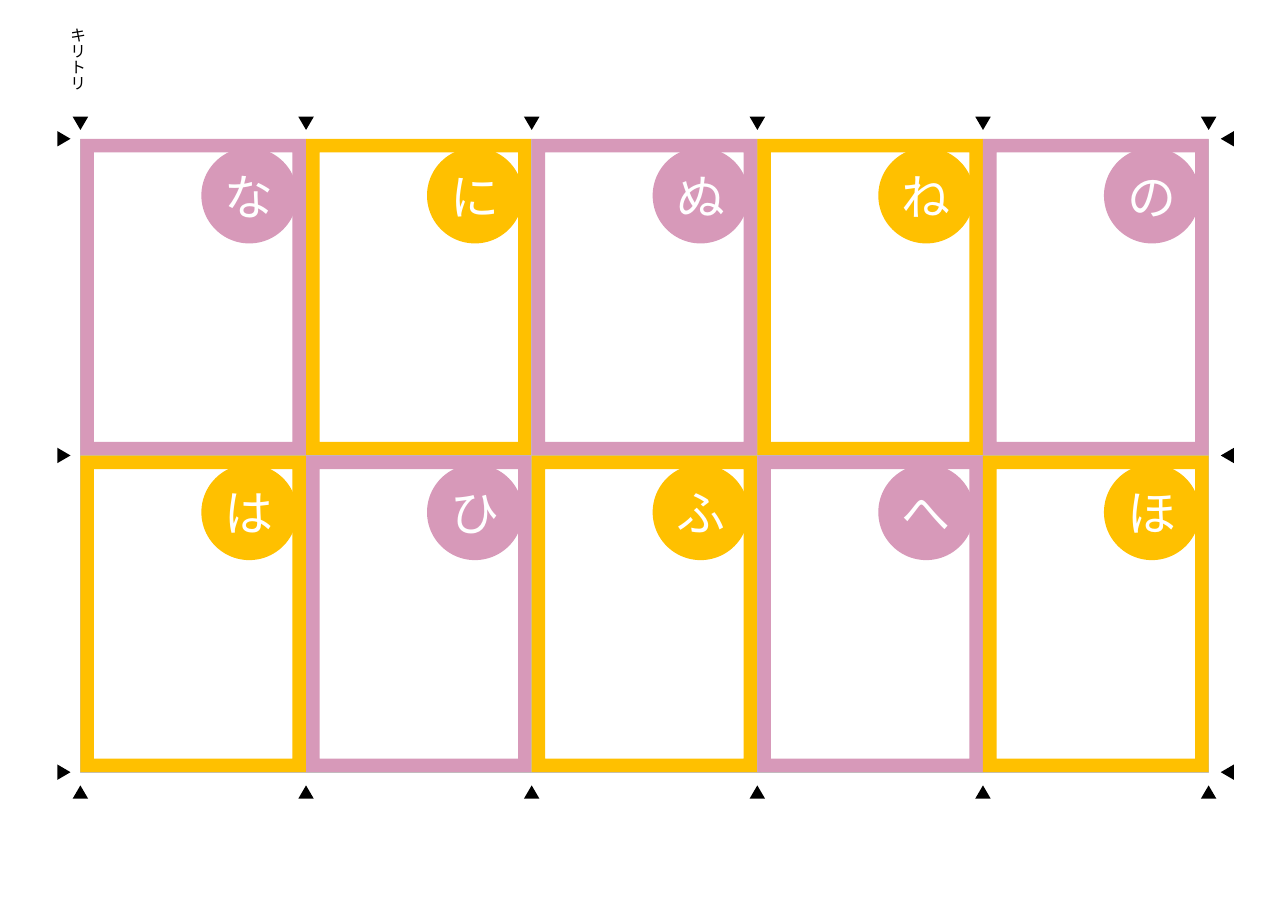
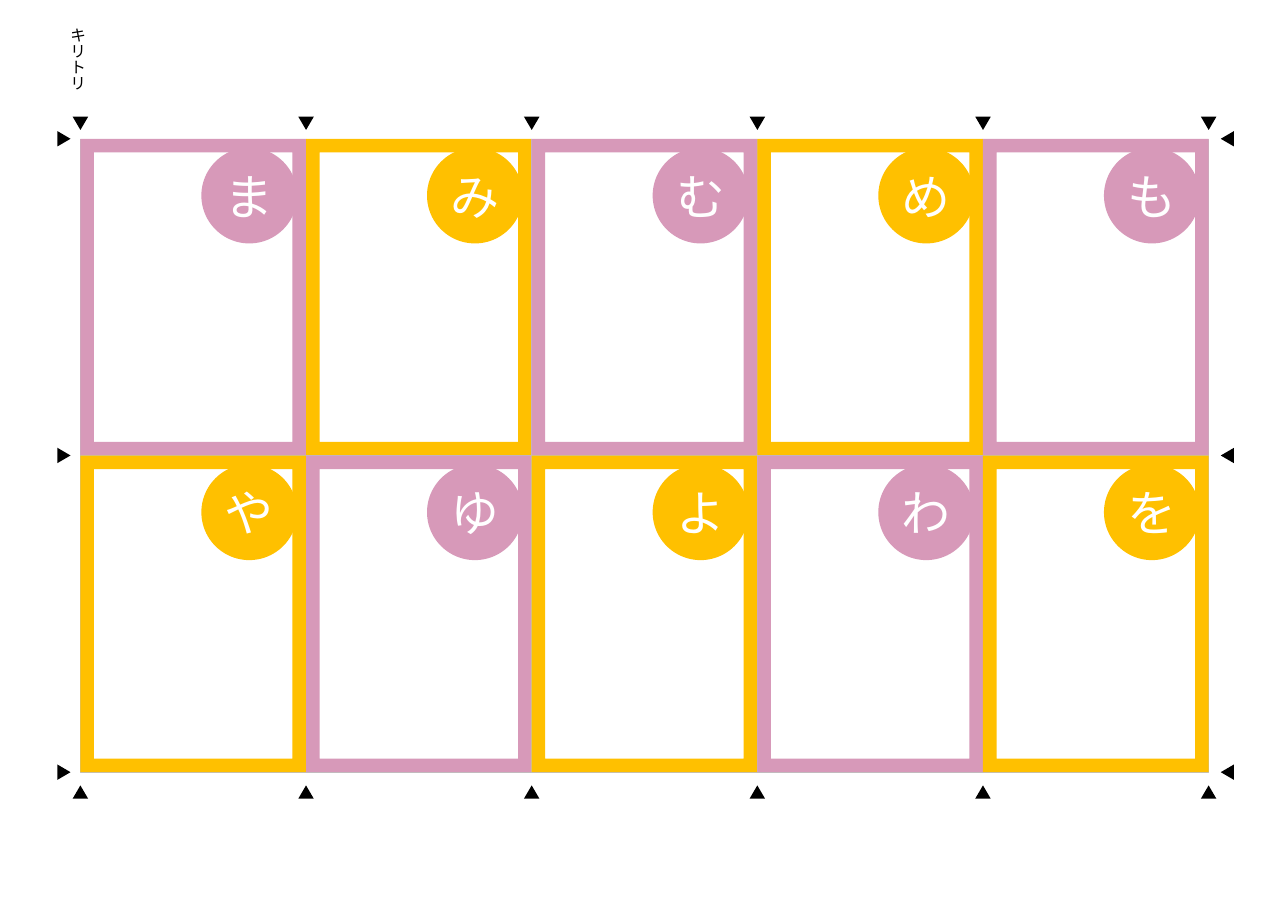
from dataclasses import dataclass

from lxml import etree
from pptx import Presentation
from pptx.dml.color import RGBColor
from pptx.enum.shapes import MSO_SHAPE
from pptx.enum.text import MSO_ANCHOR, MSO_AUTO_SIZE, PP_ALIGN
from pptx.oxml.ns import qn
from pptx.util import Inches, Pt

RECTANGLE, FRAME = MSO_SHAPE.RECTANGLE, MSO_SHAPE.FRAME
OVAL, TRIANGLE = MSO_SHAPE.OVAL, MSO_SHAPE.ISOSCELES_TRIANGLE
MIDDLE = MSO_ANCHOR.MIDDLE
CENTER, RIGHT = PP_ALIGN.CENTER, PP_ALIGN.RIGHT
FIT_SHAPE = MSO_AUTO_SIZE.SHAPE_TO_FIT_TEXT


@dataclass(frozen=True)
class Theme:
    font: str = "Noto Sans CJK JP"
    kana_size: float = 32
    label_size: float = 10.5
    card_colors: tuple = ("D799B9", "FFC000")
    ink: str = "000000"
    paper: str = "FFFFFF"
    cut_line: str = "BFBFBF"
    cut_line_width: float = 0.25


@dataclass(frozen=True)
class Box:
    left: float
    top: float
    width: float
    height: float

    def inches(self):
        return [Inches(value) for value in (self.left, self.top, self.width, self.height)]

    def cell(self, row, column, rows, columns):
        width, height = self.width / columns, self.height / rows
        return Box(self.left + column * width, self.top + row * height, width, height)


THEME = Theme()
SLIDE_WIDTH, SLIDE_HEIGHT = 11.69, 8.27
ROWS, COLUMNS = 2, 5
SHEET = Box(0.73, 1.26, 10.24, 5.75)
LABEL = Box(0.6, 0.25, 0.21, 0.73)
MARK_WIDTH, MARK_HEIGHT = 0.14, 0.12
MARK_GAPS = {"top": 0.14, "bottom": 0.18, "left": 0.15, "right": 0.17}
FRAME_SHARE = 0.06
BADGE_SIZE, BADGE_GAP = 0.87, 0.08
CARD_SHEETS = [
    ("なにぬねの", "はひふへほ"),
    ("まみむめも", "やゆよわを"),
]


def add_shape(slide, kind, box, fill=None, line=None):
    shape = slide.shapes.add_shape(kind, *box.inches())
    shape.shadow.inherit = False
    if fill:
        shape.fill.solid()
        shape.fill.fore_color.rgb = RGBColor.from_string(fill)
    else:
        shape.fill.background()
    if line:
        shape.line.color.rgb = RGBColor.from_string(line)
        shape.line.width = Pt(THEME.cut_line_width)
    else:
        shape.line.fill.background()
    return shape


def write_text(shape, text, size, color, alignment, **frame_format):
    """Write one run without margins, in the theme font for Latin and East Asian text."""
    frame = shape.text_frame
    margins = dict.fromkeys(
        ("margin_left", "margin_top", "margin_right", "margin_bottom"), 0)
    settings = {"vertical_anchor": MIDDLE, **margins, **frame_format}
    for name, value in settings.items():
        setattr(frame, name, value)
    paragraph = frame.paragraphs[0]
    paragraph.alignment = alignment
    run = paragraph.add_run()
    run.text = text
    for name, value in {"name": THEME.font, "size": Pt(size)}.items():
        setattr(run.font, name, value)
    run.font.color.rgb = RGBColor.from_string(color)
    for properties in shape.element.iter(qn("a:rPr")):
        etree.SubElement(properties, qn("a:ea"), typeface=THEME.font)


def add_cut_mark(slide, center_x, center_y, rotation):
    box = Box(center_x - MARK_WIDTH / 2, center_y - MARK_HEIGHT / 2,
              MARK_WIDTH, MARK_HEIGHT)
    add_shape(slide, TRIANGLE, box, THEME.ink).rotation = rotation


def add_cut_marks(slide, sheet):
    """Point at both ends of every grid line of the sheet."""
    for column in range(COLUMNS + 1):
        x = sheet.left + column * sheet.width / COLUMNS
        add_cut_mark(slide, x, sheet.top - MARK_GAPS["top"], 180)
        add_cut_mark(slide, x, sheet.top + sheet.height + MARK_GAPS["bottom"], 0)
    for row in range(ROWS + 1):
        y = sheet.top + row * sheet.height / ROWS
        add_cut_mark(slide, sheet.left - MARK_GAPS["left"], y, 90)
        add_cut_mark(slide, sheet.left + sheet.width + MARK_GAPS["right"], y, 270)


def add_cut_label(slide, box):
    label = slide.shapes.add_textbox(*box.inches())
    write_text(label, "キリトリ", THEME.label_size, THEME.ink, RIGHT,
               word_wrap=False, auto_size=FIT_SHAPE)
    label.element.txBody.find(qn("a:bodyPr")).set("vert", "eaVert")


def add_card(slide, box, kana, color):
    add_shape(slide, RECTANGLE, box, line=THEME.cut_line)
    add_shape(slide, FRAME, box, color).adjustments[0] = FRAME_SHARE
    badge_box = Box(box.left + box.width - BADGE_GAP - BADGE_SIZE,
                    box.top + BADGE_GAP, BADGE_SIZE, BADGE_SIZE)
    badge = add_shape(slide, OVAL, badge_box, color)
    write_text(badge, kana, THEME.kana_size, THEME.paper, CENTER)


def add_card_sheet(presentation, kana_rows):
    slide = presentation.slides.add_slide(presentation.slide_layouts[6])
    add_cut_marks(slide, SHEET)
    add_cut_label(slide, LABEL)
    for row, kana_row in enumerate(kana_rows):
        for column, kana in enumerate(kana_row):
            color = THEME.card_colors[(row + column) % 2]
            add_card(slide, SHEET.cell(row, column, ROWS, COLUMNS), kana, color)


def main():
    presentation = Presentation()
    presentation.slide_width = Inches(SLIDE_WIDTH)
    presentation.slide_height = Inches(SLIDE_HEIGHT)
    for kana_rows in CARD_SHEETS:
        add_card_sheet(presentation, kana_rows)
    presentation.save("out.pptx")


if __name__ == "__main__":
    main()
